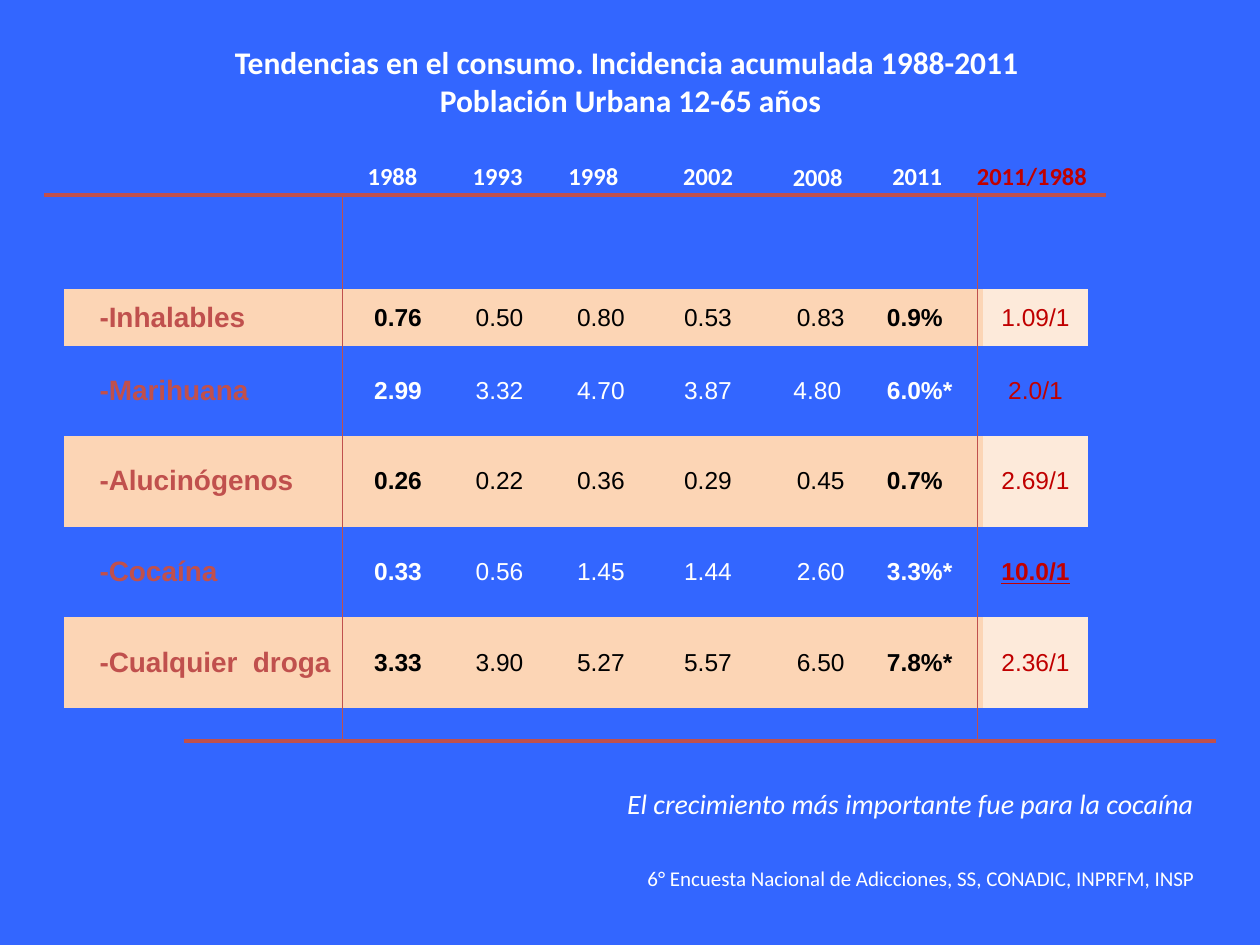
import pptx
import pptx.util
import pptx.dml.color
import pptx.enum.shapes
import pptx.enum.text
import pptx.oxml.ns
import lxml.etree

Inches = pptx.util.Inches
Pt = pptx.util.Pt
RGBColor = pptx.dml.color.RGBColor
ALIGN = pptx.enum.text.PP_ALIGN
ANCHOR = pptx.enum.text.MSO_ANCHOR

BLUE = RGBColor(0x33, 0x66, 0xFF)
WHITE = RGBColor(0xFF, 0xFF, 0xFF)
BLACK = RGBColor(0, 0, 0)
BRICK = RGBColor(0xC0, 0x50, 0x4D)
RED = RGBColor(0xC0, 0, 0)
PEACH = RGBColor(0xFC, 0xD5, 0xB5)
PALE_PEACH = RGBColor(0xFD, 0xEA, 0xDA)

TITLE = ["Tendencias en el consumo. Incidencia acumulada 1988-2011 ",
         "Población Urbana 12-65 años"]
CONCLUSION = "El crecimiento más importante fue para la cocaína "
SOURCE = "6° Encuesta Nacional de Adicciones, SS, CONADIC, INPRFM, INSP"
HEADINGS = [
    ("1988", 2.64, 1.23, 0.95, WHITE),
    ("1993", 3.45, 1.23, 1, WHITE),
    ("1998", 4.21, 1.23, 1, WHITE),
    ("2002", 5.08, 1.23, 1.08, WHITE),
    ("2008", 6.02, 1.24, 0.94, WHITE),
    ("2011", 6.81, 1.23, 0.94, WHITE),
    ("2011/1988", 7.6, 1.23, 1.18, RED),
]
DRUGS = [
    ("-Inhalables", "0.76", "0.50", "0.80", "0.53", "0.83", "0.9%", "1.09/1"),
    ("-Marihuana", "2.99", "3.32", "4.70", "3.87", "4.80 ", "6.0%*", "2.0/1"),
    ("-Alucinógenos", "0.26", "0.22", "0.36", "0.29", "0.45", "0.7%", "2.69/1"),
    ("-Cocaína", "0.33", "0.56", "1.45", "1.44", "2.60", "3.3%*", "10.0/1"),
    ("-Cualquier  droga", "3.33", "3.90", "5.27", "5.57", "6.50", "7.8%*", "2.36/1"),
]
HIGHLIGHT = "10.0/1"
COLUMN_WIDTHS = [2.27, 0.76, 0.85, 0.76, 0.94, 0.85, 0.86, 0.84]
ROW_HEIGHTS = [0.46, 0.46, 0.71, 0.72, 0.72, 0.72]
LABEL, FIRST_YEAR, LAST_YEAR, RATIO = 0, 1, 6, 7
TABLE_LEFT, TABLE_TOP = 0.51, 1.83
RULE_TOP, RULE_BOTTOM = 1.55, 5.88
RULES = [
    (2.72, RULE_TOP, 2.72, RULE_BOTTOM, 0.75),
    (7.76, RULE_TOP, 7.76, RULE_BOTTOM, 0.75),
    (1.46, RULE_BOTTOM, 9.65, RULE_BOTTOM, 2.25),
    (0.35, RULE_TOP, 8.78, RULE_TOP, 2.25),
]
NO_STYLE = "{2D5ABB26-0587-4C30-8999-92F81FD0307C}"


def add_run(paragraph, text, size, color, font="Calibri", bold=False, italic=False):
    run = paragraph.add_run()
    run.text = text
    run.font.name = font
    run.font.size = Pt(size)
    run.font.bold = bold
    run.font.italic = italic
    run.font.color.rgb = color
    return run


def add_text(slide, lines, box, size, color=WHITE, align=ALIGN.CENTER, **style):
    frame = slide.shapes.add_textbox(*map(Inches, box)).text_frame
    frame.word_wrap = True
    for index, line in enumerate(lines):
        paragraph = frame.add_paragraph() if index else frame.paragraphs[0]
        paragraph.alignment = align
        add_run(paragraph, line, size, color, **style)
    return frame


def add_rule(slide, start_x, start_y, end_x, end_y, width):
    rule = slide.shapes.add_connector(
        pptx.enum.shapes.MSO_CONNECTOR.STRAIGHT,
        *map(Inches, (start_x, start_y, end_x, end_y)))
    rule.line.color.rgb = BRICK
    rule.line.width = Pt(width)
    lxml.etree.SubElement(rule.element.spPr, pptx.oxml.ns.qn("a:effectLst"))


def fill_cell(cell, text, column, banded):
    if banded:
        cell.fill.solid()
        cell.fill.fore_color.rgb = PALE_PEACH if column == RATIO else PEACH
    else:
        cell.fill.background()
    if not text:
        return
    cell.vertical_anchor = ANCHOR.MIDDLE
    paragraph = cell.text_frame.paragraphs[0]
    paragraph.alignment = ALIGN.LEFT if column in (LABEL, LAST_YEAR) else ALIGN.CENTER
    if column == LABEL:
        cell.margin_left = Inches(0.28)
    color = {LABEL: BRICK, RATIO: RED}.get(column, BLACK if banded else WHITE)
    bold = column in (LABEL, FIRST_YEAR, LAST_YEAR) or text == HIGHLIGHT
    run = add_run(paragraph, text, 16 if column == LABEL else 14, color, "Arial", bold)
    if text == HIGHLIGHT:
        run.font.underline = True


def add_drug_table(slide):
    rows = [("",) * len(COLUMN_WIDTHS)] + DRUGS
    frame = slide.shapes.add_table(
        len(rows), len(COLUMN_WIDTHS), Inches(TABLE_LEFT), Inches(TABLE_TOP),
        Inches(sum(COLUMN_WIDTHS)), Inches(sum(ROW_HEIGHTS)))
    table = frame.table
    table.first_row = False
    table.horz_banding = False
    frame.element.find(".//" + pptx.oxml.ns.qn("a:tableStyleId")).text = NO_STYLE
    for column, width in zip(table.columns, COLUMN_WIDTHS):
        column.width = Inches(width)
    for row_index, values in enumerate(rows):
        table.rows[row_index].height = Inches(ROW_HEIGHTS[row_index])
        for column_index, text in enumerate(values):
            fill_cell(table.cell(row_index, column_index), text,
                      column_index, row_index % 2 == 1)


def main():
    presentation = pptx.Presentation()
    presentation.slide_width = Inches(10)
    presentation.slide_height = Inches(7.5)
    slide = presentation.slides.add_slide(presentation.slide_layouts[6])
    slide.background.fill.solid()
    slide.background.fill.fore_color.rgb = BLUE

    add_text(slide, TITLE, (1.46, 0.29, 7.09, 0.7), 18, bold=True)
    for text, left, top, width, color in HEADINGS:
        add_text(slide, [text], (left, top, width, 0.33), 14, color, bold=True)
    add_drug_table(slide)
    for rule in RULES:
        add_rule(slide, *rule)
    add_text(slide, [CONCLUSION], (3.98, 6.19, 6.54, 0.37), 16, italic=True)
    source = add_text(slide, [SOURCE], (5.04, 6.82, 4.77, 0.3), 12, align=ALIGN.LEFT)
    source.vertical_anchor = ANCHOR.MIDDLE

    presentation.save("out.pptx")


if __name__ == "__main__":
    main()
